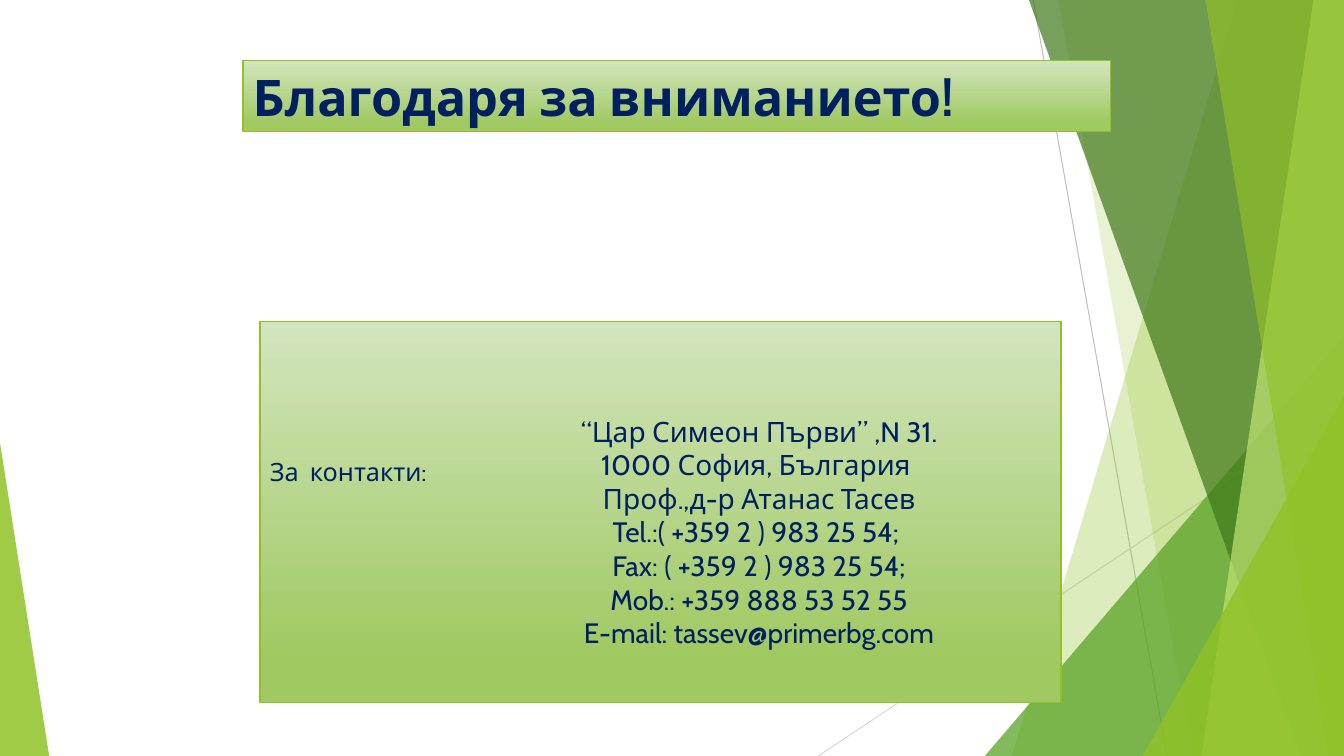
from dataclasses import dataclass
from pptx import Presentation
from pptx.dml.color import RGBColor
from pptx.enum.shapes import MSO_CONNECTOR, MSO_SHAPE
from pptx.enum.text import MSO_ANCHOR, PP_ALIGN
from pptx.oxml.ns import qn
from pptx.util import Cm, Pt
from lxml.etree import SubElement


@dataclass(frozen=True)
class Theme:
    font: str = "Cabin"
    navy: str = "002060"
    lime: str = "90C226"
    leaf: str = "54A021"
    moss: str = "3F7819"
    mint: str = "C0E474"
    pale: str = "D3E5BE"
    grass: str = "A0C962"
    dark: str = "BFBFBF"
    light: str = "D9D9D9"
    title: int = 36
    label: int = 18
    text: int = 20


THEME = Theme()
WIDE, HIGH = 33.87, 19.05
ADDRESS = [
    "“Цар Симеон Първи” ,N 31.",
    "1000 София, България ",
    "Проф.,д-р Атанас Тасев",
    "Tel.:( +359 2 ) 983 25 54; ",
    "Fax: ( +359 2 ) 983 25 54;",
    "Mob.: +359 888 53 52 55",
    "E-mail: tassev@primerbg.com",
]


def rgb(code):
    return RGBColor.from_string(code)


def tint(shape, color, alpha):
    """Fill a shape with a see-through colour and no outline."""
    shape.shadow.inherit = False
    shape.line.fill.background()
    shape.fill.solid()
    shape.fill.fore_color.rgb = rgb(color)
    node = shape.fill._xPr.find(qn("a:solidFill"))[0]
    SubElement(node, qn("a:alpha")).set("val", str(alpha * 1000))


def rule(slide, start, end, color):
    line = slide.shapes.add_connector(
        MSO_CONNECTOR.STRAIGHT, *map(Cm, start + end))
    line.line.color.rgb = rgb(color)
    line.line.width = Pt(0.75)
    SubElement(line._element.spPr, qn("a:effectLst"))


def wedge(slide, top, base, color, alpha):
    """Full-height band from a slanted left edge to the right slide edge."""
    pen = slide.shapes.build_freeform(Cm(top), 0, scale=1.0)
    points = [(WIDE, 0), (WIDE, HIGH), (base, HIGH)]
    pen.add_line_segments([(Cm(x), Cm(y)) for x, y in points], close=True)
    tint(pen.convert_to_shape(), color, alpha)


def corner(slide, left, top, width, apex, color, alpha):
    """Right triangle that stands on the bottom edge."""
    shape = slide.shapes.add_shape(
        MSO_SHAPE.ISOSCELES_TRIANGLE,
        Cm(left), Cm(top), Cm(width), Cm(HIGH - top))
    shape.adjustments[0] = apex
    tint(shape, color, alpha)


def decor(slide):
    rule(slide, (26.04, 0), (29.41, HIGH), THEME.dark)
    rule(slide, (WIDE, 10.24), (20.62, HIGH), THEME.light)
    wedge(slide, 31.19, 25.5, THEME.lime, 30)
    wedge(slide, 26.67, 30.05, THEME.lime, 20)
    corner(slide, 24.82, 8.46, WIDE - 24.82, 1, THEME.leaf, 72)
    wedge(slide, 25.93, 32.79, THEME.moss, 70)
    wedge(slide, 33.1, 30.28, THEME.mint, 70)
    wedge(slide, 30.38, 33.48, THEME.lime, 65)
    corner(slide, 28.8, 9.98, WIDE - 28.8, 1, THEME.lime, 80)
    corner(slide, 0, 11.15, 1.24, 0, THEME.lime, 85)


def write(shape, text, size, align=PP_ALIGN.LEFT, bold=False):
    frame = shape.text_frame
    frame.word_wrap = True
    frame.text = text
    for para in frame.paragraphs:
        para.alignment = align
        for run in para.runs:
            run.font.name = THEME.font
            run.font.size = Pt(size)
            run.font.bold = bold
            run.font.color.rgb = rgb(THEME.navy)
    return frame


def panel(slide, box):
    """Green gradient rectangle with a thin lime outline."""
    shape = slide.shapes.add_shape(MSO_SHAPE.RECTANGLE, *map(Cm, box))
    shape.shadow.inherit = False
    shape.line.color.rgb = rgb(THEME.lime)
    shape.line.width = Pt(1)
    shape.fill.gradient()
    shape.fill.gradient_angle = 270
    stops = zip(shape.fill.gradient_stops,
                [(0, THEME.pale), (0.88, THEME.grass)])
    for stop, (place, color) in stops:
        stop.position = place
        stop.color.rgb = rgb(color)
    return shape


def heading(slide, box):
    frame = write(panel(slide, box), "Благодаря за вниманието!",
                  THEME.title, bold=True)
    frame.vertical_anchor = MSO_ANCHOR.MIDDLE


def contact(slide, box):
    left, top, width, height = box
    # Label on the green panel
    frame = write(panel(slide, box), "За  контакти:", THEME.label)
    frame.vertical_anchor = MSO_ANCHOR.TOP
    frame.margin_top = Cm(3.4)
    # Address lines
    note = slide.shapes.add_textbox(
        Cm(left + 6.38), Cm(top + 2.21), Cm(width - 7.79), Cm(height - 3.35))
    frame = write(note, "\n".join(ADDRESS), THEME.text, PP_ALIGN.CENTER)


def main():
    deck = Presentation()
    deck.slide_width, deck.slide_height = Cm(WIDE), Cm(HIGH)
    slide = deck.slides.add_slide(deck.slide_layouts[6])
    decor(slide)
    heading(slide, (6.12, 1.52, 21.87, 1.8))
    contact(slide, (6.55, 8.1, 20.19, 9.6))
    deck.save("out.pptx")


if __name__ == "__main__":
    main()
